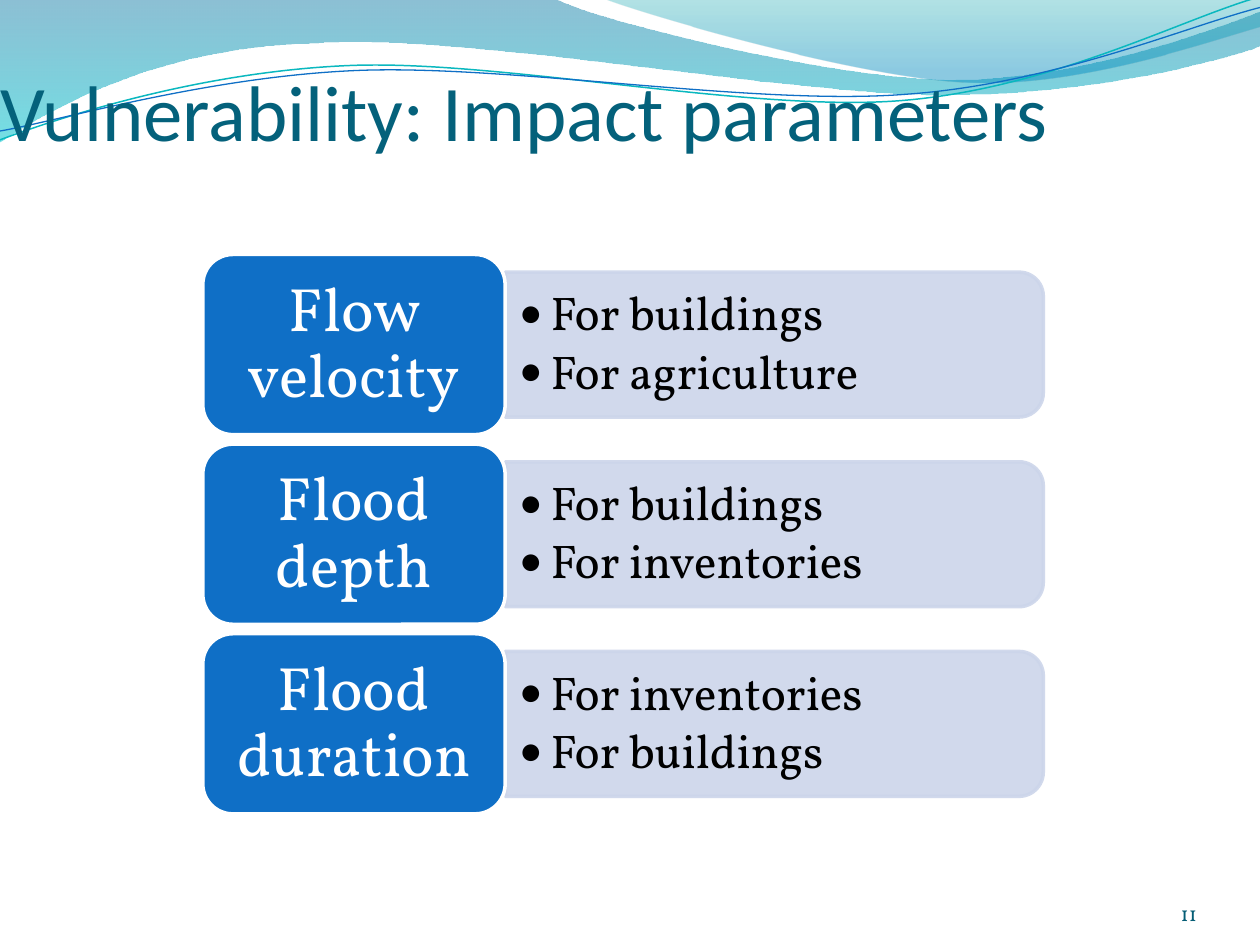
import math

from lxml import etree
from pptx import Presentation
from pptx.dml.color import RGBColor
from pptx.enum.shapes import MSO_SHAPE
from pptx.enum.text import MSO_ANCHOR, MSO_AUTO_SIZE, PP_ALIGN
from pptx.oxml.ns import qn
from pptx.util import Inches, Pt

ROUNDED = MSO_SHAPE.ROUNDED_RECTANGLE
ROUNDED_TOP = MSO_SHAPE.ROUND_2_SAME_RECTANGLE
LEFT, CENTER, RIGHT = PP_ALIGN.LEFT, PP_ALIGN.CENTER, PP_ALIGN.RIGHT
MIDDLE, BOTTOM = MSO_ANCHOR.MIDDLE, MSO_ANCHOR.BOTTOM

BLUE = RGBColor(0x0F, 0x6F, 0xC6)
PALE_BLUE = RGBColor(0xCC, 0xD5, 0xEA)
TITLE_TEAL = RGBColor(0x04, 0x61, 0x7B)
NUMBER_TEAL = RGBColor(0x04, 0x5D, 0x75)
LINE_TEAL = RGBColor(0x0A, 0xB8, 0xBF)
WAVE_BLUE = RGBColor(0x00, 0x74, 0xA1)
WAVE_CYAN = RGBColor(0x00, 0xC6, 0xCF)
CREST_TEAL = RGBColor(0x00, 0xA1, 0xA9)
CREST_BLUE = RGBColor(0x00, 0x8B, 0xBF)
WHITE = RGBColor(0xFF, 0xFF, 0xFF)
BLACK = RGBColor(0, 0, 0)

TITLE_FONT, BODY_FONT = "Calibri", "Vollkorn"

# Each wave is a start point and segments: one point is a line, three a Bezier curve.
WAVE = [(0, 0), [(4.4, -0.01)],
        [(4.76, 0.17), (6.64, 0.63), (7.58, 0.63)],
        [(8.53, 0.63), (9.58, 0.26), (10, 0.09)], [(10.01, 0.36)],
        [(9.83, 0.44), (8.7, 0.76), (7.46, 0.75)],
        [(6.22, 0.75), (3.82, 0.28), (2.57, 0.34)],
        [(1.29, 0.36), (0.46, 0.83), (-0.01, 1.13)]]
CREST = [(4.79, -0.01),
         [(5.09, 0.11), (6.82, 0.62), (7.69, 0.65)],
         [(8.56, 0.69), (9.61, 0.32), (10, 0.21)], [(10, 0)]]
TEAL_LINE = [(0, 1.11),
             [(0.48, 0.93), (1.58, 0.57), (2.77, 0.52)],
             [(3.95, 0.47), (5.93, 0.89), (7.13, 0.8)],
             [(8.33, 0.71), (9.38, 0.15), (9.98, -0.02)]]
BLUE_LINE = [(0, 1.04),
             [(0.47, 0.96), (1.64, 0.61), (2.83, 0.56)],
             [(4.03, 0.51), (5.97, 0.84), (7.17, 0.75)],
             [(8.36, 0.67), (9.41, 0.21), (10, 0.06)]]
LINE_TILT = 357.3

PARAMETERS = [
    ("Flow velocity", ["For buildings", "For agriculture"]),
    ("Flood depth", ["For buildings", "For inventories"]),
    ("Flood duration", ["For inventories", "For buildings"]),
]
FIRST_ROW_TOP, LAST_ROW_TOP = 2.02, 5.03
LABEL_LEFT, LABEL_WIDTH, LABEL_HEIGHT = 1.61, 2.4, 1.43
PANEL_WIDTH, PANEL_HEIGHT = 4.27, 1.15


def set_opacity(shape, *percents):
    """Give each colour of the shape, in document order, its opacity."""
    colors = shape.element.spPr.iter(qn("a:srgbClr"))
    for color, percent in zip(list(colors), percents):
        etree.SubElement(color, qn("a:alpha"), val=str(percent * 1000))


def turn(point, center, degrees):
    angle = math.radians(degrees)
    x, y = point[0] - center[0], point[1] - center[1]
    return (center[0] + x * math.cos(angle) - y * math.sin(angle),
            center[1] + x * math.sin(angle) + y * math.cos(angle))


def bend(outline, segments):
    """Turn each three straight steps of a curved segment into a Bezier curve."""
    steps = iter(list(outline.element.iter(qn("a:lnTo"))))
    for segment in segments:
        first, *others = [next(steps) for _ in segment]
        if others:
            first.tag = qn("a:cubicBezTo")
            for step in others:
                first.append(step[0])
                step.getparent().remove(step)


def add_outline(slide, path, close=False, center=(0, 0), tilt=0):
    """Add a curved outline; a tilted one is drawn level, then rotated."""
    start, *segments = path
    points = [start] + [point for segment in segments for point in segment]
    first, *others = [tuple(map(Inches, turn(point, center, -tilt)))
                      for point in points]
    builder = slide.shapes.build_freeform(*first)
    builder.add_line_segments(others, close=close)
    outline = builder.convert_to_shape()
    bend(outline, segments)
    outline.rotation = tilt
    outline.shadow.inherit = False
    return outline


def add_wave(slide, path, stops):
    """Add a closed wave, stops being (position, colour, opacity percent)."""
    wave = add_outline(slide, path, close=True)
    wave.line.fill.background()
    wave.fill.gradient()
    wave.fill.gradient_angle = 270
    for stop, (position, color, _) in zip(wave.fill.gradient_stops, stops):
        stop.position = position
        stop.color.rgb = color
    set_opacity(wave, *(opacity for _, _, opacity in stops))


def add_wave_line(slide, path, center, color, width):
    wave_line = add_outline(slide, path, center=center, tilt=LINE_TILT)
    wave_line.fill.background()
    wave_line.line.color.rgb = color
    wave_line.line.width = Pt(width)


def add_box(slide, preset, left, top, width, height, fill, line):
    box = slide.shapes.add_shape(preset, Inches(left), Inches(top),
                                 Inches(width), Inches(height))
    box.shadow.inherit = False
    box.fill.solid()
    box.fill.fore_color.rgb = fill
    box.line.color.rgb = line
    box.line.width = Pt(2)
    return box


def add_textbox(slide, left, top, width, height):
    return slide.shapes.add_textbox(Inches(left), Inches(top),
                                    Inches(width), Inches(height))


def add_bullet(paragraph):
    paragraph.level = 1
    properties = paragraph._p.get_or_add_pPr()
    properties.set("marL", str(Inches(0.25)))
    properties.set("indent", str(Inches(-0.25)))
    etree.SubElement(properties, qn("a:buFont"), typeface=TITLE_FONT)
    etree.SubElement(properties, qn("a:buChar"), char="•")


def write(shape, lines, *, size, color, font=BODY_FONT, align=LEFT,
          anchor=MIDDLE, insets=(0, 0, 0, 0), spacing=None, after=None,
          bullets=False):
    frame = shape.text_frame
    frame.word_wrap = True
    frame.auto_size = MSO_AUTO_SIZE.NONE
    frame.vertical_anchor = anchor
    (frame.margin_left, frame.margin_top,
     frame.margin_right, frame.margin_bottom) = map(Inches, insets)
    frame.text = "\n".join(lines)
    for paragraph in frame.paragraphs:
        paragraph.alignment = align
        if spacing:
            paragraph.line_spacing = spacing
        if after:
            paragraph.space_after = Pt(after)
        if bullets:
            add_bullet(paragraph)
        run_font = paragraph.runs[0].font
        run_font.name = font
        run_font.size = Pt(size)
        run_font.color.rgb = color


def add_parameter(slide, top, name, impacts):
    panel_left = LABEL_LEFT + LABEL_WIDTH
    # The panel is turned a quarter, so its frame is tall around the same centre.
    panel = add_box(slide, ROUNDED_TOP,
                    panel_left + (PANEL_WIDTH - PANEL_HEIGHT) / 2,
                    top + (LABEL_HEIGHT - PANEL_WIDTH) / 2,
                    PANEL_HEIGHT, PANEL_WIDTH, PALE_BLUE, PALE_BLUE)
    panel.rotation = 90
    set_opacity(panel, 90, 90)
    impact_list = add_textbox(slide, panel_left, top + 0.2, 4.21, 1.03)
    write(impact_list, impacts, size=27, color=BLACK, spacing=0.9, after=4.05,
          insets=(0.11, 0.06, 0.11, 0.06), bullets=True)
    label = add_box(slide, ROUNDED, LABEL_LEFT, top, LABEL_WIDTH, LABEL_HEIGHT,
                    BLUE, WHITE)
    write(label, [name], size=35, color=WHITE, align=CENTER, spacing=0.9,
          insets=(0.15, 0.07, 0.15, 0.07))


def add_title(slide, text):
    title = slide.shapes.title
    title.left, title.top = Inches(0), Inches(0)
    title.width, title.height = Inches(9), Inches(1.25)
    write(title, [text], size=45, color=TITLE_TEAL, font=TITLE_FONT,
          anchor=BOTTOM, insets=(0, 0.05, 0, 0))
    title.element.getparent().append(title.element)  # in front of the waves


def main():
    deck = Presentation()
    deck.slide_width, deck.slide_height = Inches(10), Inches(7.5)
    slide = deck.slides.add_slide(deck.slide_layouts[5])
    add_wave(slide, WAVE, [(0, WAVE_BLUE, 45), (1, WAVE_CYAN, 55)])
    add_wave(slide, CREST, [(0, CREST_TEAL, 30), (0.8, CREST_BLUE, 45)])
    add_wave_line(slide, TEAL_LINE, (4.99, 0.58), LINE_TEAL, 0.85)
    add_wave_line(slide, BLUE_LINE, (5, 0.59), BLUE, 0.75)
    add_title(slide, "Vulnerability: Impact parameters")
    slide_number = add_textbox(slide, 8.67, 6.95, 0.83, 0.4)
    write(slide_number, ["11"], size=12, color=NUMBER_TEAL, align=RIGHT,
          anchor=BOTTOM)
    row_pitch = (LAST_ROW_TOP - FIRST_ROW_TOP) / (len(PARAMETERS) - 1)
    for row, (name, impacts) in enumerate(PARAMETERS):
        add_parameter(slide, FIRST_ROW_TOP + row * row_pitch, name, impacts)
    deck.save("out.pptx")


if __name__ == "__main__":
    main()
